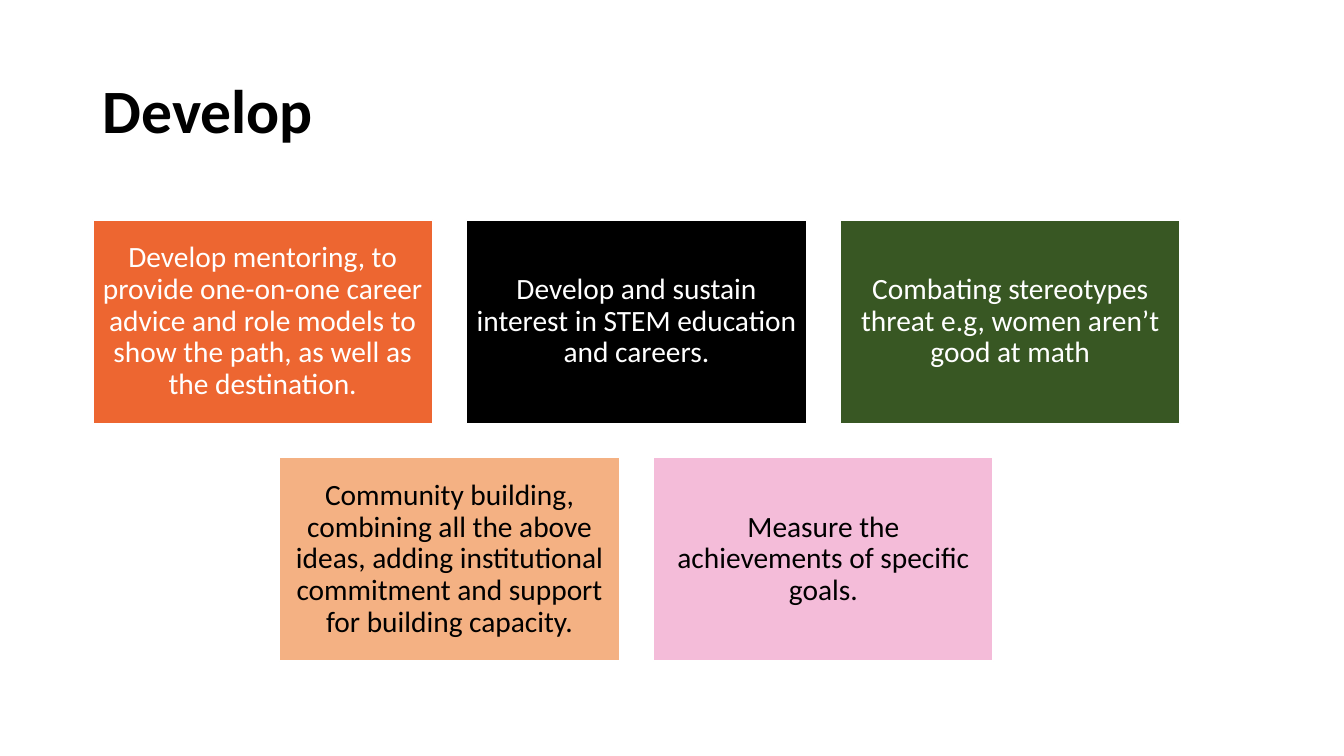
from pptx import Presentation
from pptx.dml.color import RGBColor
from pptx.enum.shapes import MSO_SHAPE
from pptx.enum.text import MSO_ANCHOR, PP_ALIGN
from pptx.util import Cm, Pt

RECTANGLE = MSO_SHAPE.RECTANGLE
MIDDLE = MSO_ANCHOR.MIDDLE
LEFT, CENTER = PP_ALIGN.LEFT, PP_ALIGN.CENTER

COLORS = {
    "white": "FFFFFF",
    "black": "000000",
    "orange": "ED6631",
    "green": "385723",
    "peach": "F4B183",
    "pink": "F4BCD9",
}

CARD_WIDTH, CARD_HEIGHT = 8.56, 5.13
COLUMN_STEP, ROW_STEP = 9.42, 5.99
CARDS_TOP, CARDS_CENTER = 5.54, 16.04

# Each card: text, fill, text color
CARD_ROWS = [
    [
        ("Develop mentoring, to provide one-on-one career advice and role models "
         "to show the path, as well as the destination.", "orange", "white"),
        ("Develop and sustain interest in STEM education and careers.",
         "black", "white"),
        ("Combating stereotypes threat e.g, women aren’t good at math",
         "green", "white"),
    ],
    [
        ("Community building, combining all the above ideas, adding institutional "
         "commitment and support for building capacity.", "peach", "black"),
        ("Measure the achievements of specific goals.", "pink", "black"),
    ],
]


def color(name):
    return RGBColor.from_string(COLORS[name])


def apply_format(target, values):
    for name, value in values.items():
        setattr(target, name, value)


class PageBuilder:
    font_name = "Calibri"
    line_spacing = 0.9

    def __init__(self, page):
        self.page = page

    def fill_text(self, frame, text, text_color, align, **font_format):
        apply_format(frame, {"word_wrap": True, "vertical_anchor": MIDDLE})
        para = frame.paragraphs[0]
        apply_format(para, {"alignment": align, "line_spacing": self.line_spacing})
        span = para.add_run()
        span.text = text
        apply_format(span.font, {"name": self.font_name, **font_format})
        span.font.color.rgb = color(text_color)

    def title(self, text, left, top, width, height):
        box = self.page.shapes.title
        apply_format(box, {"left": Cm(left), "top": Cm(top),
                           "width": Cm(width), "height": Cm(height)})
        self.fill_text(box.text_frame, text, "black", LEFT, size=Pt(44), bold=True)

    def card(self, text, fill, text_color, left, top):
        box = self.page.shapes.add_shape(
            RECTANGLE, Cm(left), Cm(top), Cm(CARD_WIDTH), Cm(CARD_HEIGHT))
        box.shadow.inherit = False
        box.fill.solid()
        box.fill.fore_color.rgb = color(fill)
        box.line.color.rgb = color("white")
        box.line.width = Pt(1)
        sides = ("left", "top", "right", "bottom")
        apply_format(box.text_frame, {f"margin_{side}": Cm(0.23) for side in sides})
        self.fill_text(box.text_frame, text, text_color, CENTER, size=Pt(21))

    def card_row(self, cards, top):
        """Place the cards side by side, centered as a group."""
        row_width = (len(cards) - 1) * COLUMN_STEP + CARD_WIDTH
        left = CARDS_CENTER - row_width / 2
        for column, card in enumerate(cards):
            self.card(*card, left + column * COLUMN_STEP, top)


def main():
    deck = Presentation()
    deck.slide_width, deck.slide_height = Cm(33.87), Cm(19.05)
    title_only = deck.slide_layouts[5]
    builder = PageBuilder(deck.slides.add_slide(title_only))
    builder.title("Develop", 2.33, 1.01, 29.21, 3.68)
    for row, cards in enumerate(CARD_ROWS):
        builder.card_row(cards, CARDS_TOP + row * ROW_STEP)
    deck.save("out.pptx")


if __name__ == "__main__":
    main()
